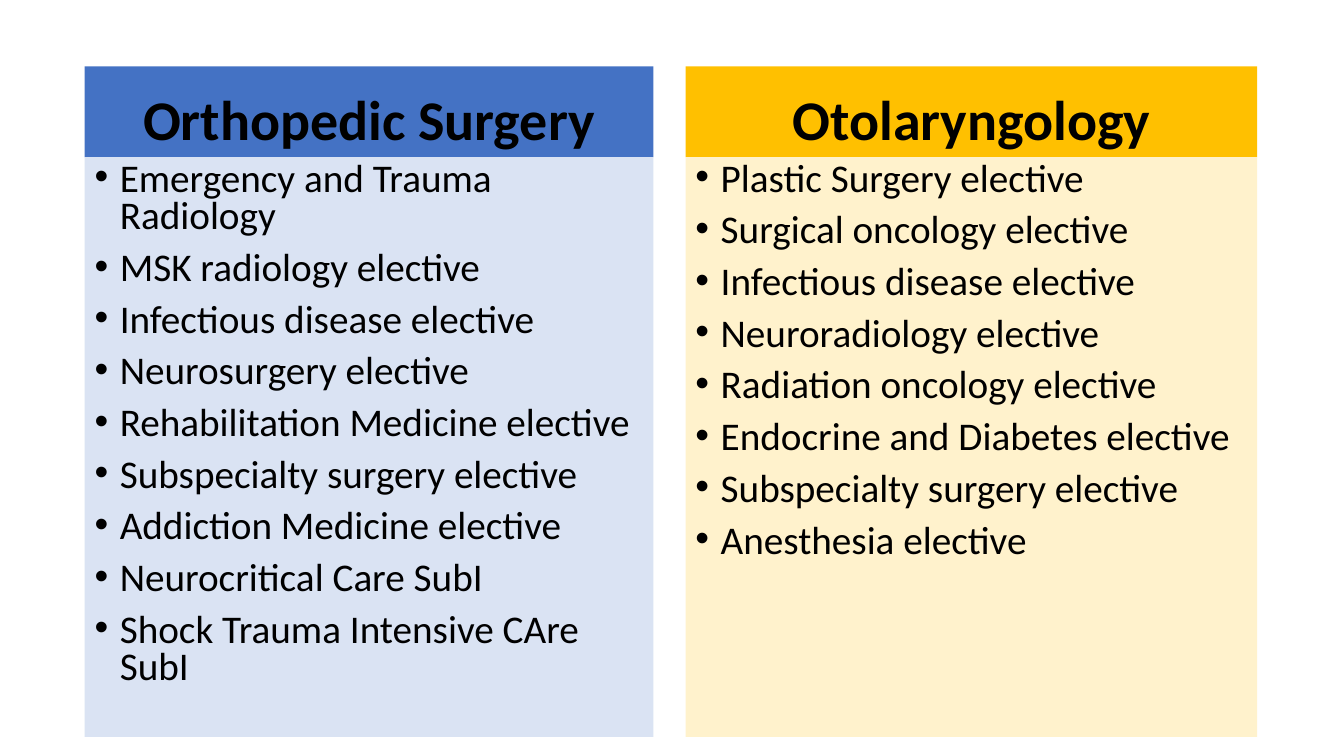
from lxml import etree
from pptx import Presentation
from pptx.dml.color import RGBColor
from pptx.enum.shapes import MSO_SHAPE
from pptx.enum.text import MSO_ANCHOR as Anchor, PP_ALIGN as Align
from pptx.oxml.ns import qn
from pptx.util import Inches, Pt

BLACK = RGBColor(0x00, 0x00, 0x00)
BLUE = RGBColor(0x44, 0x72, 0xC4)
PALE_BLUE = RGBColor(0xDA, 0xE3, 0xF3)
GOLD = RGBColor(0xFF, 0xC0, 0x00)
PALE_GOLD = RGBColor(0xFF, 0xF2, 0xCC)

HEADER_TOP, HEADER_HEIGHT, LIST_HEIGHT = 0.66, 0.9, 5.75

# Left, width, header colour, list colour, title, electives
COLUMNS = [
    (0.84, 5.64, BLUE, PALE_BLUE, "Orthopedic Surgery", [
        "Emergency and Trauma Radiology",
        "MSK radiology elective",
        "Infectious disease elective",
        "Neurosurgery elective",
        "Rehabilitation Medicine elective",
        "Subspecialty surgery elective",
        "Addiction Medicine elective",
        "Neurocritical Care SubI",
        "Shock Trauma Intensive CAre SubI",
    ]),
    (6.8, 5.67, GOLD, PALE_GOLD, "Otolaryngology", [
        "Plastic Surgery elective",
        "Surgical oncology elective",
        "Infectious disease elective",
        "Neuroradiology elective",
        "Radiation oncology elective",
        "Endocrine and Diabetes elective",
        "Subspecialty surgery elective",
        "Anesthesia elective",
    ]),
]


class SlideBuilder:
    font_name = "Calibri"
    font_color = BLACK

    def __init__(self, slide):
        self.slide = slide

    def panel(self, left, top, width, height, color, lines, size, spacing,
              anchor=Anchor.TOP, align=Align.LEFT, bold=False):
        """Add a filled rectangle with one paragraph per line of text."""
        shape = self.slide.shapes.add_shape(
            MSO_SHAPE.RECTANGLE, Inches(left), Inches(top), Inches(width), Inches(height))
        shape.shadow.inherit = False
        shape.fill.solid()
        shape.fill.fore_color.rgb = color
        shape.line.fill.background()
        text_frame = shape.text_frame
        text_frame.word_wrap = True
        text_frame.vertical_anchor = anchor
        text_frame.text = "\n".join(lines)
        for paragraph in text_frame.paragraphs:
            paragraph.alignment = align
            paragraph.line_spacing = spacing
            paragraph.space_before = Pt(10)
            for run in paragraph.runs:
                run.font.name = self.font_name
                run.font.size = Pt(size)
                run.font.bold = bold
                run.font.color.rgb = self.font_color
        return shape

    def header(self, left, width, color, title):
        self.panel(left, HEADER_TOP, width, HEADER_HEIGHT, color, [title], 40, 0.9,
                   Anchor.BOTTOM, Align.CENTER, bold=True)

    def bullet_list(self, left, width, color, items):
        shape = self.panel(left, HEADER_TOP + HEADER_HEIGHT, width, LIST_HEIGHT,
                           color, items, 28, 0.8)
        indent = Inches(0.25)
        for paragraph in shape.text_frame.paragraphs:
            properties = paragraph._p.get_or_add_pPr()
            properties.set("marL", str(indent))
            properties.set("indent", str(-indent))
            etree.SubElement(properties, qn("a:buFont"), typeface="Arial")
            etree.SubElement(properties, qn("a:buChar"), char="•")


def main():
    presentation = Presentation()
    presentation.slide_width = Inches(13.33)
    presentation.slide_height = Inches(7.5)
    builder = SlideBuilder(presentation.slides.add_slide(presentation.slide_layouts[6]))

    # One header and one list per specialty
    for left, width, header_color, list_color, title, electives in COLUMNS:
        builder.header(left, width, header_color, title)
        builder.bullet_list(left, width, list_color, electives)

    presentation.save("out.pptx")


if __name__ == "__main__":
    main()
